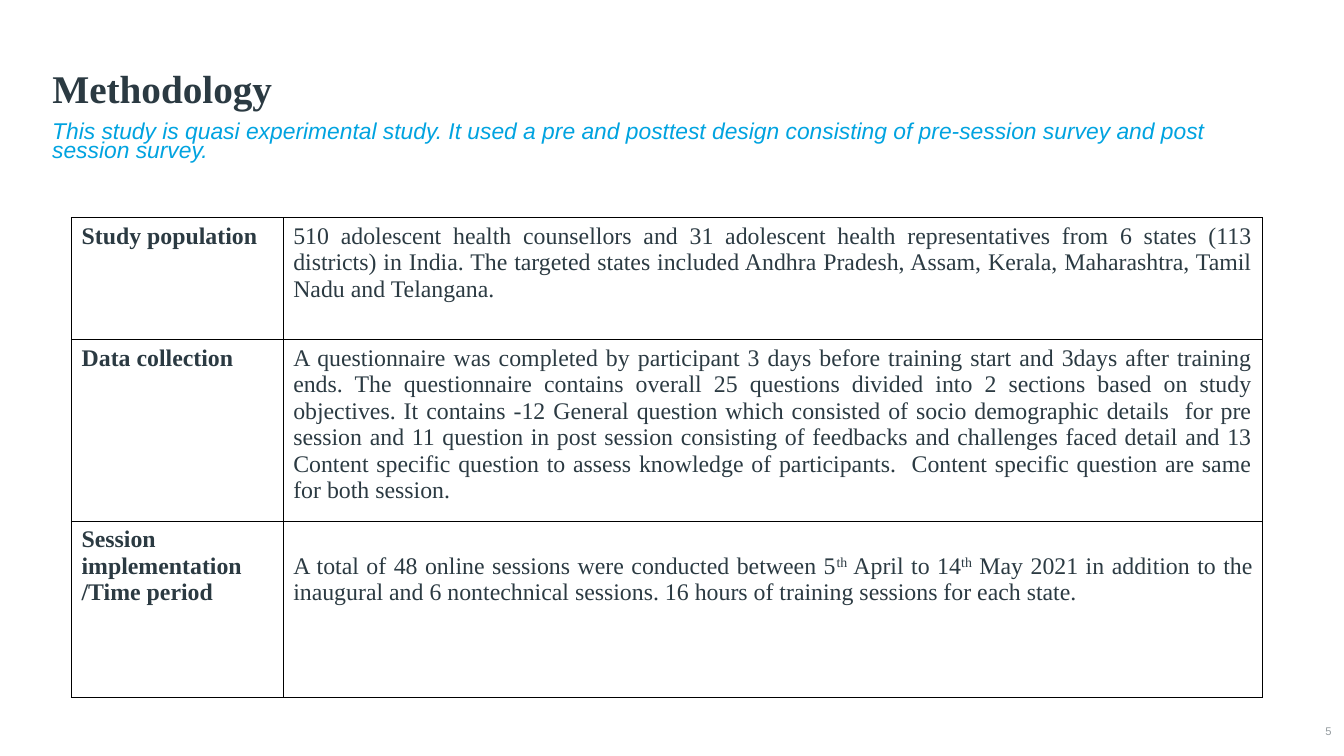
from lxml.etree import SubElement
from pptx import Presentation
from pptx.dml.color import RGBColor
from pptx.enum.text import MSO_ANCHOR as Anchor, MSO_AUTO_SIZE as Fit, PP_ALIGN as Align
from pptx.oxml.ns import qn
from pptx.util import Pt

INK = RGBColor(0x2B, 0x3A, 0x42)
BLUE = RGBColor(0x00, 0xA3, 0xE0)
GREY = RGBColor(0x95, 0x9C, 0xA0)
WHITE = RGBColor(0xFF, 0xFF, 0xFF)
BLACK = RGBColor(0, 0, 0)

SERIF, SANS = "Times New Roman", "Arial"
HEAD = {"name": SERIF, "size": Pt(28), "bold": True}
LEAD = {"name": SANS, "size": Pt(16.3), "italic": True}
PAGE = {"name": SANS, "size": Pt(8)}
LABEL = {"name": SERIF, "size": Pt(17), "bold": True}
BODY = {"name": SERIF, "size": Pt(17), "bold": False}
NO_PAD = dict.fromkeys(("margin_left", "margin_right", "margin_top", "margin_bottom"), 0)

COLS = (151.2, 699.8)
ROWS = (87.1, 126, 126)
LINE = 19.1  # one line of table text
PAD = 3.6

# Every second piece of a cell's text is superscript.
TABLE = (
    ("Study population", PAD, (
        "510 adolescent health counsellors and 31 adolescent health representatives "
        "from 6 states (113 districts) in India. The targeted states included Andhra "
        "Pradesh, Assam, Kerala, Maharashtra, Tamil Nadu and Telangana.",)),
    ("Data collection", PAD, (
        "A questionnaire was completed by participant 3 days before training start and "
        "3days after training ends. The questionnaire contains overall 25 questions "
        "divided into 2 sections based on study objectives. It contains -12 General "
        "question which consisted of socio demographic details  for pre session and 11 "
        "question in post session consisting of feedbacks and challenges faced detail "
        "and 13 Content specific question to assess knowledge of participants.  Content "
        "specific question are same for both session.",)),
    ("Session implementation /Time period", PAD + LINE, (
        "A total of 48 online sessions were conducted between 5", "th", " April to 14",
        "th", " May 2021 in addition to the inaugural and 6 nontechnical sessions. "
        "16 hours of training sessions for each state.")),
)


def apply(item, values):
    for key, value in values.items():
        setattr(item, key, value)


def write(frame, pieces, font, color, para):
    """Fill the first paragraph; odd pieces are raised."""
    line = frame.paragraphs[0]
    apply(line, para)
    for i, piece in enumerate(pieces):
        run = line.add_run()
        run.text = piece
        apply(run.font, font)
        run.font.color.rgb = color
        if i % 2:
            run.font._element.set("baseline", "30000")


def place(shape, left, top, width, height):
    apply(shape, {"left": Pt(left), "top": Pt(top),
                  "width": Pt(width), "height": Pt(height)})


def add_title(slide, text):
    title = slide.shapes.title
    place(title, 30.2, 23, 892.8, 60.5)
    apply(title.text_frame, {"vertical_anchor": Anchor.BOTTOM, "word_wrap": True,
                             "auto_size": Fit.NONE})
    write(title.text_frame, [text], HEAD, INK,
          {"alignment": Align.LEFT, "line_spacing": 0.9})


def add_text(slide, box, text, font, color, para, frame):
    shape = slide.shapes.add_textbox(*map(Pt, box))
    apply(shape.text_frame, {"word_wrap": True, **frame})
    write(shape.text_frame, [text], font, color, para)


def edge(cell):
    props = cell._tc.get_or_add_tcPr()
    for side in ("lnL", "lnR", "lnT", "lnB"):
        line = SubElement(props, qn(f"a:{side}"), w=str(Pt(1)))
        fill = SubElement(line, qn("a:solidFill"))
        SubElement(fill, qn("a:srgbClr"), val=str(BLACK))


def fill_cell(cell, pieces, font, top):
    edge(cell)
    cell.fill.solid()
    cell.fill.fore_color.rgb = WHITE
    apply(cell, {"margin_left": Pt(7.2), "margin_right": Pt(7.2),
                 "margin_top": Pt(top), "margin_bottom": Pt(PAD),
                 "vertical_anchor": Anchor.TOP})
    write(cell.text_frame, pieces, font, INK, {"alignment": Align.JUSTIFY})


def add_grid(slide):
    box = (51.1, 155.5, sum(COLS), sum(ROWS))
    table = slide.shapes.add_table(len(ROWS), len(COLS), *map(Pt, box)).table
    apply(table, {"first_row": False, "horz_banding": False})
    for col, width in zip(table.columns, COLS):
        col.width = Pt(width)
    for row, height, (label, top, pieces) in zip(table.rows, ROWS, TABLE):
        row.height = Pt(height)
        fill_cell(row.cells[0], [label], LABEL, PAD)
        fill_cell(row.cells[1], pieces, BODY, top)


def main():
    deck = Presentation()
    apply(deck, {"slide_width": Pt(960), "slide_height": Pt(540)})
    slide = deck.slides.add_slide(deck.slide_layouts.get_by_name("Title Only"))
    add_title(slide, "Methodology")
    add_text(slide, (30.2, 85, 892.8, 41),
             "This study is quasi experimental study. It used a pre and posttest design "
             "consisting of pre-session survey and post session survey.",
             LEAD, BLUE, {"line_spacing": 0.7, "space_after": Pt(6)}, {})
    add_grid(slide)
    add_text(slide, (923, 515.5, 28.1, 13.7), "5", PAGE, GREY,
             {"alignment": Align.RIGHT}, {"vertical_anchor": Anchor.MIDDLE, **NO_PAD})
    deck.save("out.pptx")


if __name__ == "__main__":
    main()
